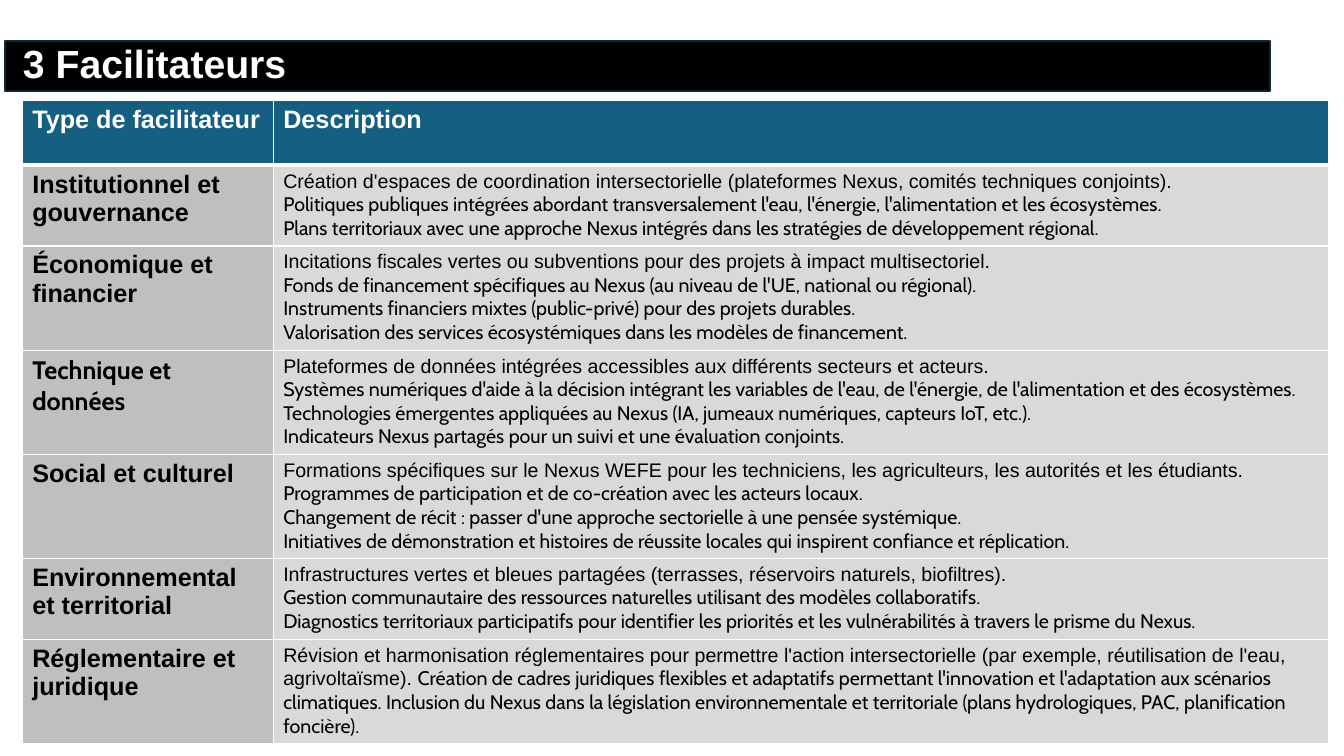
from pptx import Presentation
from pptx.dml.color import RGBColor as Rgb
from pptx.enum.shapes import MSO_SHAPE as Shape
from pptx.enum.text import MSO_ANCHOR as Anchor
from pptx.oxml.ns import qn
from pptx.util import Inches, Pt
from lxml.etree import SubElement as Sub

COLORS = {
    "bar": "000000", "edge": "092A39", "head": "156082", "label": "BFBFBF",
    "body": "D9D9D9", "white": "FFFFFF", "black": "000000",
}
HEADS = ["Type de facilitateur", "Description"]
ROWS = [
    ("Institutionnel et gouvernance", "Arial", [
        "Création d'espaces de coordination intersectorielle (plateformes Nexus, comités techniques conjoints).",
        "Politiques publiques intégrées abordant transversalement l'eau, l'énergie, l'alimentation et les écosystèmes.",
        "Plans territoriaux avec une approche Nexus intégrés dans les stratégies de développement régional.",
    ]),
    ("Économique et financier", "Arial", [
        "Incitations fiscales vertes ou subventions pour des projets à impact multisectoriel.",
        "Fonds de financement spécifiques au Nexus (au niveau de l'UE, national ou régional).",
        "Instruments financiers mixtes (public-privé) pour des projets durables.",
        "Valorisation des services écosystémiques dans les modèles de financement.",
    ]),
    ("Technique et données", "Cabin", [
        "Plateformes de données intégrées accessibles aux différents secteurs et acteurs.",
        "Systèmes numériques d'aide à la décision intégrant les variables de l'eau, de l'énergie, "
        "de l'alimentation et des écosystèmes. Technologies émergentes appliquées au Nexus "
        "(IA, jumeaux numériques, capteurs IoT, etc.).",
        "Indicateurs Nexus partagés pour un suivi et une évaluation conjoints.",
    ]),
    ("Social et culturel", "Arial", [
        "Formations spécifiques sur le Nexus WEFE pour les techniciens, les agriculteurs, les autorités et les étudiants.",
        "Programmes de participation et de co-création avec les acteurs locaux.",
        "Changement de récit : passer d'une approche sectorielle à une pensée systémique.",
        "Initiatives de démonstration et histoires de réussite locales qui inspirent confiance et réplication.",
    ]),
    ("Environnemental et territorial", "Arial", [
        "Infrastructures vertes et bleues partagées (terrasses, réservoirs naturels, biofiltres).",
        "Gestion communautaire des ressources naturelles utilisant des modèles collaboratifs.",
        "Diagnostics territoriaux participatifs pour identifier les priorités et les vulnérabilités "
        "à travers le prisme du Nexus.",
    ]),
]
LAST = ("Réglementaire et juridique", "Arial", [
    "Révision et harmonisation réglementaires pour permettre l'action intersectorielle "
    "(par exemple, réutilisation de l'eau, agrivoltaïsme). ",
    "Création de cadres juridiques flexibles et adaptatifs permettant l'innovation et l'adaptation "
    "aux scénarios climatiques. Inclusion du Nexus dans la législation environnementale et territoriale "
    "(plans hydrologiques, PAC, planification foncière).",
])


def color(key):
    return Rgb.from_string(COLORS[key])


def style(font, size, face="Arial", key="black", bold=False):
    font.size = Pt(size)
    font.name = face
    font.bold = bold
    font.color.rgb = color(key)


def add_bar(slide):
    bar = slide.shapes.add_shape(Shape.RECTANGLE, Inches(0.05), Inches(0.41), Inches(12.55), Inches(0.49))
    bar.shadow.inherit = False
    bar.fill.solid()
    bar.fill.fore_color.rgb = color("bar")
    bar.line.color.rgb = color("edge")
    bar.line.width = Pt(1.5)


def add_title(slide, text):
    box = slide.shapes.add_textbox(Inches(0.13), Inches(0.31), Inches(10.03), Inches(0.69))
    frame = box.text_frame
    frame.word_wrap = True
    frame.vertical_anchor = Anchor.MIDDLE
    para = frame.paragraphs[0]
    para.text = text
    para.line_spacing = 0.9
    style(para.font, 28, key="white", bold=True)


def set_edges(cell, top=1, bottom=1):
    props = cell._tc.get_or_add_tcPr()
    widths = {"a:lnL": 1, "a:lnR": 1, "a:lnT": top, "a:lnB": bottom}
    for tag, width in widths.items():
        line = Sub(props, qn(tag), w=str(Pt(width)))
        Sub(Sub(line, qn("a:solidFill")), qn("a:srgbClr"), val=COLORS["white"])


def paint(cell, key, **edges):
    set_edges(cell, **edges)
    cell.fill.solid()
    cell.fill.fore_color.rgb = color(key)


def fill_label(cell, text, face="Arial", key="black"):
    para = cell.text_frame.paragraphs[0]
    para.text = text
    style(para.font, 18, face, key, True)


def fill_list(cell, items):
    cell.text_frame.text = "\n".join(items)
    for i, para in enumerate(cell.text_frame.paragraphs):
        style(para.font, 14, "Cabin" if i else "Arial")


def fill_runs(cell, items):
    para = cell.text_frame.paragraphs[0]
    for text, face in zip(items, ["Arial", "Cabin"]):
        run = para.add_run()
        run.text = text
        style(run.font, 14, face)


def add_grid(slide):
    rows = ROWS + [LAST]
    count = len(rows) + 1
    high = Inches(0.64)
    table = slide.shapes.add_table(count, 2, Inches(0.22), Inches(1), Inches(12.96), high * count).table
    for col, width in zip(table.columns, [2.49, 10.47]):
        col.width = Inches(width)
    for row in table.rows:
        row.height = high
    for i, text in enumerate(HEADS):
        cell = table.cell(0, i)
        paint(cell, "head", bottom=3)
        fill_label(cell, text, key="white")
    for i, (label, face, items) in enumerate(rows, 1):
        top = 3 if i == 1 else 1
        left, right = table.cell(i, 0), table.cell(i, 1)
        paint(left, "label", top=top)
        paint(right, "body", top=top)
        fill_label(left, label, face)
        fill = fill_runs if i == len(rows) else fill_list
        fill(right, items)


def main():
    deck = Presentation()
    deck.slide_width = Inches(13.33)
    deck.slide_height = Inches(7.5)
    slide = deck.slides.add_slide(deck.slide_layouts[6])
    add_bar(slide)
    add_title(slide, "3 Facilitateurs")
    add_grid(slide)
    deck.save("out.pptx")


if __name__ == "__main__":
    main()
